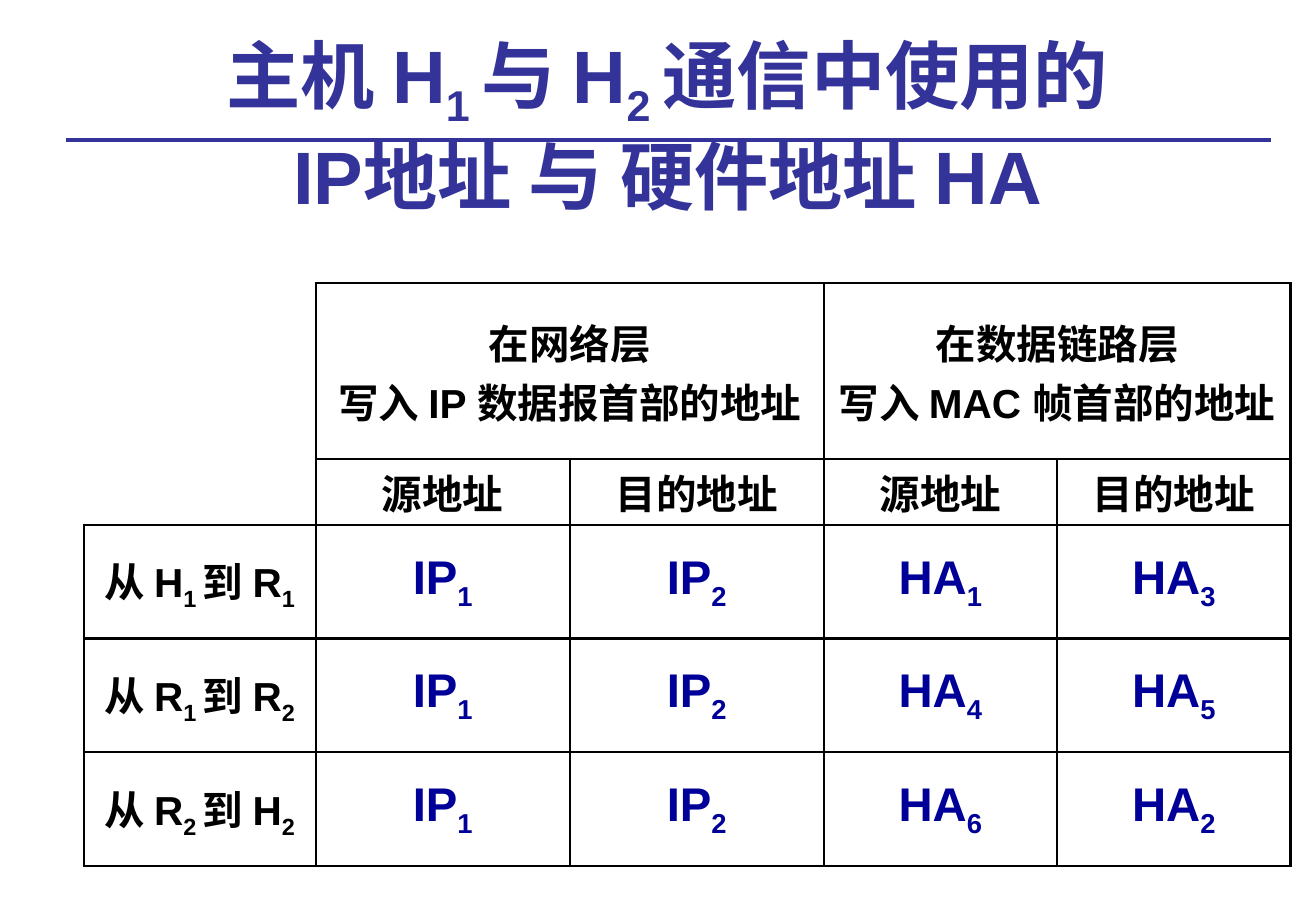
from lxml.etree import SubElement
from pptx import Presentation
from pptx.dml.color import RGBColor as RGB
from pptx.enum.shapes import MSO_CONNECTOR as Conn
from pptx.enum.text import MSO_ANCHOR as Anchor, MSO_AUTO_SIZE as Auto, PP_ALIGN as Align
from pptx.oxml.ns import qn
from pptx.util import Cm, Pt

INK = {"title": "333399", "head": "000000", "addr": "000099"}
TITLE = "主机 H_1 与 H_2 通信中使用的\vIP地址 与 硬件地址 HA"
HEADS = {1: "在网络层\n写入 IP 数据报首部的地址", 3: "在数据链路层\n写入 MAC 帧首部的地址"}
SIDES = ["源地址", "目的地址"] * 2
HOPS = [
    ["从 H_1 到 R_1", "IP_1", "IP_2", "HA_1", "HA_3"],
    ["从 R_1 到 R_2", "IP_1", "IP_2", "HA_4", "HA_5"],
    ["从 R_2 到 H_2", "IP_1", "IP_2", "HA_6", "HA_2"],
]
COLS = [4.85, 5.31, 5.31, 4.88, 4.88]
ROWS = [2.74] + [1.37] * 4


def add_run(par, text, size, ink, low=False):
    if not text:
        return
    run = par.add_run()
    run.text = text
    for key, val in {"name": "Arial", "size": Pt(size), "bold": True}.items():
        setattr(run.font, key, val)
    run.font.color.rgb = RGB.from_string(INK[ink])
    if low:
        run.font._element.set("baseline", "-25000")


def add_line(par, text, size, ink):
    base, *subs = text.split("_")
    add_run(par, base, size, ink)
    for sub in subs:
        add_run(par, sub[:2], size, ink, True)
        add_run(par, sub[2:], size, ink)


def write(frame, text, size, ink):
    for i, line in enumerate(text.split("\n")):
        par = frame.add_paragraph() if i else frame.paragraphs[0]
        par.alignment = Align.CENTER
        for j, part in enumerate(line.split("\v")):
            if j:
                par.add_line_break()
            add_line(par, part, size, ink)


def set_title(slide):
    shape = slide.shapes.title
    box = {"left": 1.37, "top": 0.53, "width": 25.17, "height": 4.19}
    for key, val in box.items():
        setattr(shape, key, Cm(val))
    frame = shape.text_frame
    look = {"auto_size": Auto.NONE, "vertical_anchor": Anchor.BOTTOM, "word_wrap": True}
    for key, val in look.items():
        setattr(frame, key, val)
    write(frame, TITLE, 44, "title")


def add_rule(slide):
    rule = slide.shapes.add_connector(Conn.STRAIGHT, Cm(1.37), Cm(2.92), Cm(26.57), Cm(2.92))
    rule.line.color.rgb = RGB.from_string(INK["title"])
    rule.line.width = Pt(2.25)
    SubElement(rule._element.spPr, qn("a:effectLst"))


def set_cell(cell, bare):
    props = cell._tc.get_or_add_tcPr()
    for side in "LRTB":
        edge = SubElement(props, qn(f"a:ln{side}"), w=str(Pt(1.5)))
        if bare and side in "LT":
            SubElement(edge, qn("a:noFill"))
        else:
            fill = SubElement(edge, qn("a:solidFill"))
            SubElement(fill, qn("a:srgbClr"), val=INK["head"])
    cell.fill.background()
    look = {
        "margin_left": Cm(0.18), "margin_right": Cm(0.18),
        "margin_top": 0, "margin_bottom": 0, "vertical_anchor": Anchor.MIDDLE,
    }
    for key, val in look.items():
        setattr(cell, key, val)


def add_grid(slide):
    table = slide.shapes.add_table(
        len(ROWS), len(COLS), Cm(1.75), Cm(5.92), Cm(sum(COLS)), Cm(sum(ROWS))
    ).table
    table.first_row = table.horz_banding = False
    for col, width in zip(table.columns, COLS):
        col.width = Cm(width)
    for row, height in zip(table.rows, ROWS):
        row.height = Cm(height)
    for r in range(len(ROWS)):
        for c in range(len(COLS)):
            set_cell(table.cell(r, c), r < 2 and c == 0)
    table.cell(0, 0).merge(table.cell(1, 0))
    for c, text in HEADS.items():
        table.cell(0, c).merge(table.cell(0, c + 1))
        write(table.cell(0, c).text_frame, text, 24, "head")
    for c, text in enumerate(SIDES, 1):
        write(table.cell(1, c).text_frame, text, 24, "head")
    for r, hop in enumerate(HOPS, 2):
        for c, text in enumerate(hop):
            size, ink = (28, "addr") if c else (24, "head")
            write(table.cell(r, c).text_frame, text, size, ink)


def main():
    deck = Presentation()
    deck.slide_width, deck.slide_height = Cm(27.51), Cm(19.05)
    slide = deck.slides.add_slide(deck.slide_layouts[5])
    add_rule(slide)
    set_title(slide)
    add_grid(slide)
    deck.save("out.pptx")


if __name__ == "__main__":
    main()
